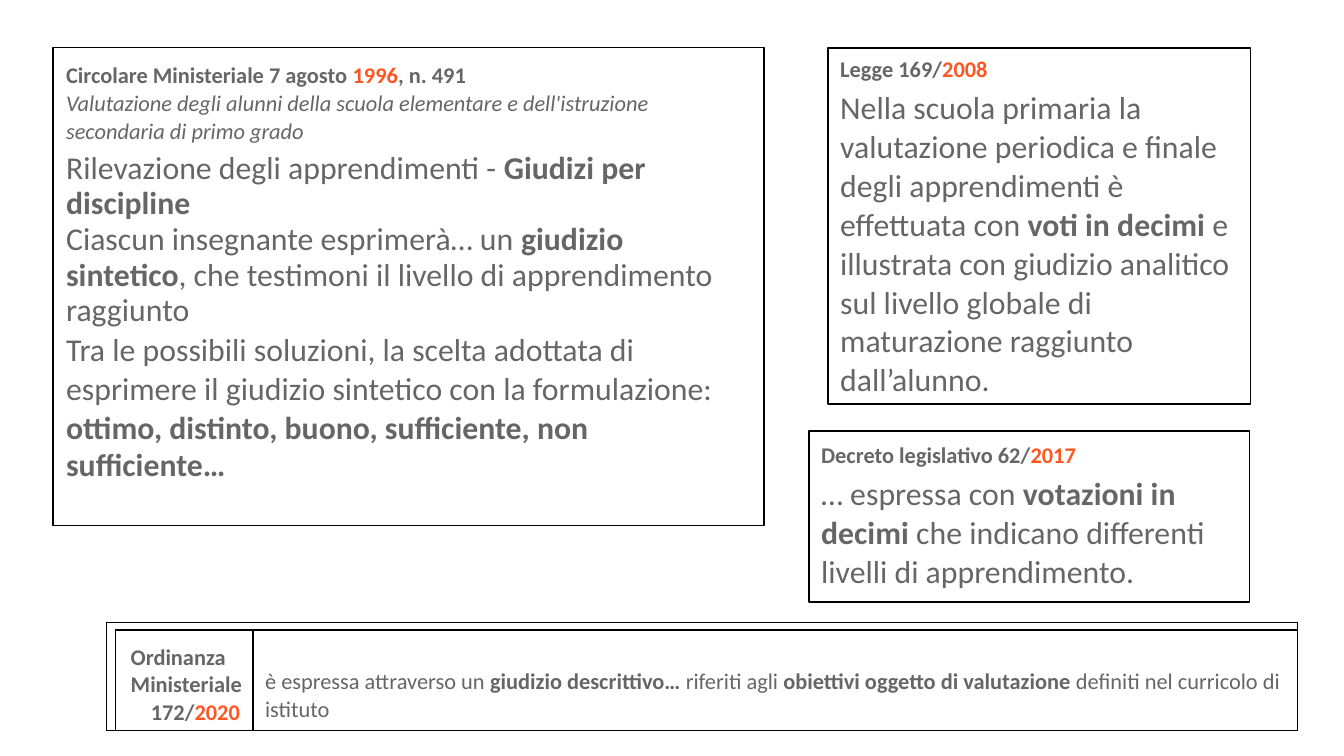
from lxml.etree import SubElement
from pptx import Presentation
from pptx.dml.color import RGBColor
from pptx.enum.shapes import MSO_SHAPE
from pptx.enum.text import MSO_ANCHOR
from pptx.oxml import parse_xml
from pptx.oxml.ns import qn
from pptx.util import Cm, Pt

GREY, ORANGE, BLACK = "666666", "FF5621", "000000"
NAMESPACE = "http://schemas.openxmlformats.org/drawingml/2006/main"


def color(value):
    return RGBColor.from_string(value)


def write(frame, paragraphs):
    frame.word_wrap = True
    frame.vertical_anchor = MSO_ANCHOR.TOP
    frame.margin_left = frame.margin_right = frame.margin_bottom = 0
    for index, (size, indent, before, spacing, runs) in enumerate(paragraphs):
        para = frame.paragraphs[0] if index == 0 else frame.add_paragraph()
        para.space_before = Pt(before)
        para.line_spacing = spacing
        properties = para._p.get_or_add_pPr()
        properties.set("marL", str(Cm(indent)))
        properties.set("indent", "0")
        properties.set("algn", "l")
        for text, style in runs:
            span = para.add_run()
            span.text = text
            span.font.name = "Calibri"
            span.font.size = Pt(size)
            span.font.bold = style in ("bold", "year")
            span.font.italic = style == "italic"
            span.font.color.rgb = color(ORANGE if style == "year" else GREY)


deck = Presentation()
deck.slide_width, deck.slide_height = Cm(25.4), Cm(14.29)
page = deck.slides.add_slide(deck.slide_layouts[6])

circular = [
    (12, 0.03, 1, 1.0, [("Circolare Ministeriale 7 agosto ", "bold"), ("1996", "year"),
                        (", n. 491", "bold")]),
    (12, 0.03, 0.1, Pt(15.1), [("Valutazione degli alunni della scuola elementare e "
                                "dell'istruzione secondaria di primo grado", "italic")]),
    (17, 0.03, 3.6, Pt(18.6), [("Rilevazione degli apprendimenti - ", ""),
                               ("Giudizi per discipline", "bold")]),
    (17, 0.03, 1.1, 0.93, [("Ciascun insegnante esprimerà… un ", ""),
                           ("giudizio sintetico", "bold"),
                           (", che testimoni il livello di apprendimento raggiunto", "")]),
    (17, 0.03, 0.1, Pt(20.8), [("Tra le possibili soluzioni, la scelta adottata di esprimere "
                                "il giudizio sintetico con la formulazione: ", ""),
                               ("ottimo, distinto, buono, sufficiente, non", "bold")]),
    (17, 0.03, 0, Pt(19.9), [("sufficiente…", "bold")]),
]
law = [
    (12, 0.23, 3.4, 1.0, [("Legge 169/", "bold"), ("2008", "year")]),
    (17, 0.23, 3, 1.02, [("Nella scuola primaria la valutazione periodica e finale degli "
                          "apprendimenti è effettuata con ", ""),
                         ("voti in decimi ", "bold"),
                         ("e illustrata con giudizio analitico sul livello globale di "
                          "maturazione raggiunto", "")]),
    (17, 0.23, 0.3, 1.0, [("dall’alunno.", "")]),
]
decree = [
    (12, 0.23, 5.2, 1.0, [("Decreto legislativo 62/", "bold"), ("2017", "year")]),
    (17, 0.23, 3, 1.02, [("… espressa con ", ""), ("votazioni in decimi ", "bold"),
                         ("che indicano differenti livelli di apprendimento.", "")]),
]

text_box = page.shapes.add_textbox(Cm(1.22), Cm(1.12), Cm(12.34), Cm(8.05))
text_box.text_frame.margin_top = Cm(0.03)
write(text_box.text_frame, circular)

for left, top, width, height, inset, paragraphs in [
    (1, 0.9, 13.44, 9.03, 0, []),
    (15.65, 0.91, 7.98, 6.73, 0.13, law),
    (15.29, 8.15, 8.33, 3.23, 0.18, decree),
]:
    box = page.shapes.add_shape(MSO_SHAPE.RECTANGLE, Cm(left), Cm(top), Cm(width), Cm(height))
    box.shadow.inherit = False
    box.fill.background()
    box.line.color.rgb = color(BLACK)
    box.line.width = Pt(0.72)
    box.text_frame.margin_top = Cm(inset)
    write(box.text_frame, paragraphs)

widths, heights = [0.18, 2.59, 19.74], [0.15, 1.9]
table = page.shapes.add_table(2, 3, Cm(2.01), Cm(11.76), Cm(sum(widths)), Cm(sum(heights))).table
table.first_row = table.horz_banding = False
for column, width in zip(table.columns, widths):
    column.width = Cm(width)
for row, height in zip(table.rows, heights):
    row.height = Cm(height)

ordinance = [
    (12, 0.28, 0, 1.02, [("Ordinanza Ministeriale", "bold")]),
    (12, 0.66, 0.2, 1.0, [("172/", "bold"), ("2020", "year")]),
]
judgement = [
    (12, 0.23, 0, 1.02, [("è espressa attraverso un ", ""), ("giudizio descrittivo… ", "bold"),
                         ("riferiti agli ", ""), ("obiettivi oggetto di valutazione ", "bold"),
                         ("definiti nel curricolo di istituto", "")]),
]
contents = {(1, 1): (0.25, ordinance), (1, 2): (0.72, judgement)}
borders = [["LT", "TB", "TRB"], ["LRB", "LTRB", "LTRB"]]
for row in range(2):
    for column in range(3):
        cell = table.cell(row, column)
        cell.fill.background()
        cell.vertical_anchor = MSO_ANCHOR.TOP
        cell.margin_left = cell.margin_right = cell.margin_bottom = 0
        inset, paragraphs = contents.get((row, column), (0, []))
        cell.margin_top = Cm(inset)
        if paragraphs:
            write(cell.text_frame, paragraphs)
        else:
            SubElement(cell.text_frame.paragraphs[0]._p, qn("a:endParaRPr")).set("sz", "200")
        for position, side in enumerate("LRTB"):
            outer = (side, row, column) in [("L", row, 0), ("R", row, 2), ("T", 0, column),
                                            ("B", 1, column)]
            paint = (f'<a:solidFill><a:srgbClr val="{BLACK}"/></a:solidFill>'
                     if side in borders[row][column] else "<a:noFill/>")
            cell._tc.get_or_add_tcPr().insert(position, parse_xml(
                f'<a:ln{side} xmlns:a="{NAMESPACE}" w="{Pt(0.5 if outer else 0.75)}">'
                f'{paint}</a:ln{side}>'))

deck.save("out.pptx")
